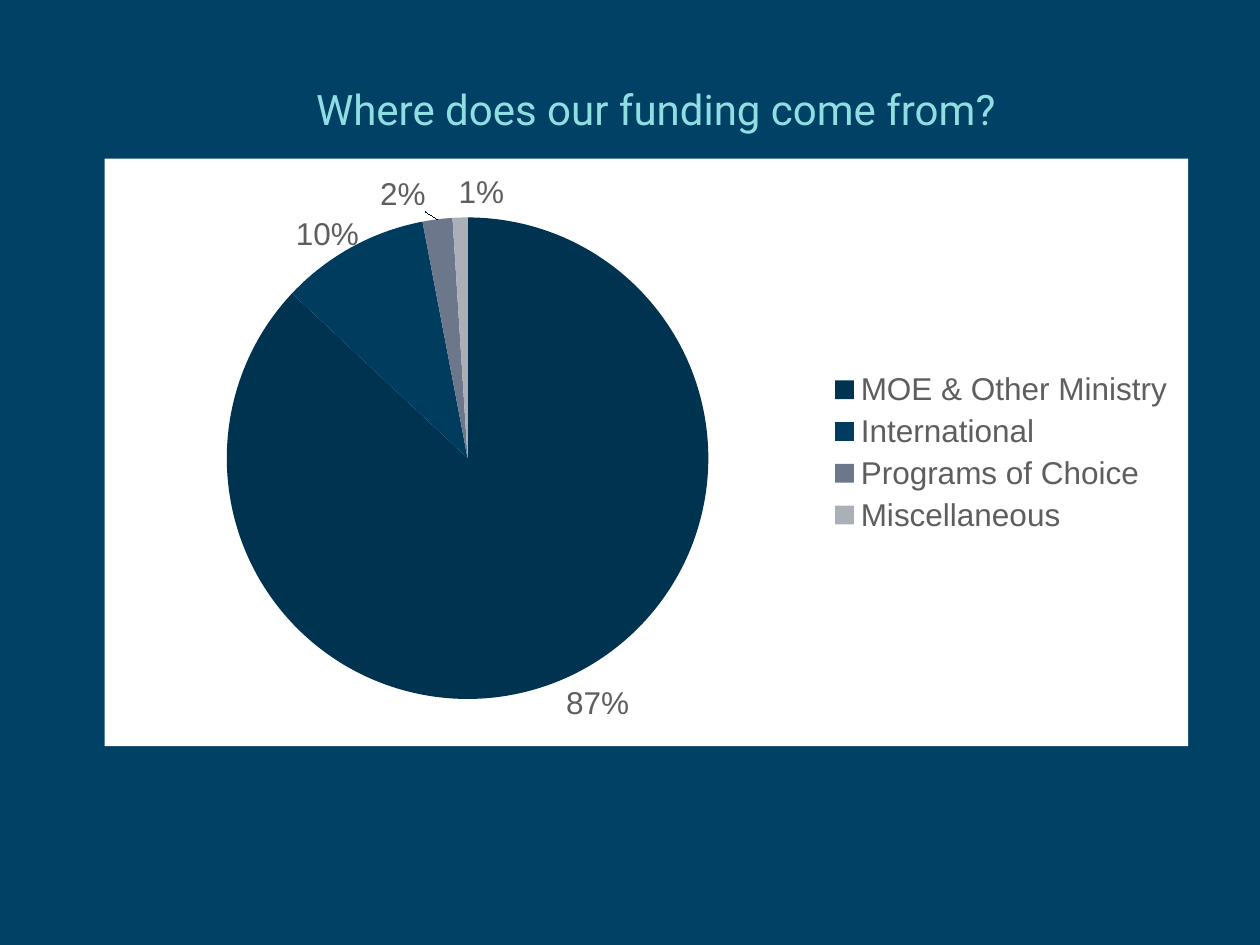
from lxml import etree
from pptx import Presentation
from pptx.chart.data import CategoryChartData
from pptx.dml.color import RGBColor
from pptx.enum.chart import XL_CHART_TYPE, XL_LABEL_POSITION, XL_LEGEND_POSITION
from pptx.enum.text import MSO_ANCHOR, PP_ALIGN
from pptx.oxml import parse_xml
from pptx.oxml.ns import nsdecls, qn
from pptx.util import Cm, Pt

PIE = XL_CHART_TYPE.PIE
OUTSIDE = XL_LABEL_POSITION.OUTSIDE_END
RIGHT = XL_LEGEND_POSITION.RIGHT
MIDDLE = MSO_ANCHOR.MIDDLE
CENTER = PP_ALIGN.CENTER
TITLE_ONLY = 5

BACKGROUND = "004165"
TITLE_COLOR = "8FDFE2"
LABEL_COLOR = "5E5E5E"
PANEL = "FFFFFF"

# Source, share, slice colour, label shift as fractions of the chart
FUNDING = [
    ("MOE & Other Ministry", 0.87, "003350", (0, 0)),
    ("International", 0.10, "003C5E", (0.01, 0.02)),
    ("Programs of Choice", 0.02, "6C778B", (-0.01, 0)),
    ("Miscellaneous", 0.01, "ABB0B8", (0.02, 0)),
]


def color(hex_code):
    return RGBColor.from_string(hex_code)


def add_element(parent, tag, value):
    etree.SubElement(parent, qn(tag)).set("val", str(value))


def manual_layout(modes, **values):
    """Return a chart layout with the given modes and fractions."""
    layout = parse_xml(f"<c:layout {nsdecls('c')}><c:manualLayout/></c:layout>")
    for tag, value in {**modes, **values}.items():
        add_element(layout[0], f"c:{tag}", value)
    return layout


def place_title(slide, text, box):
    title = slide.shapes.title
    title.left, title.top, title.width, title.height = box
    frame = title.text_frame
    frame.word_wrap = False
    frame.vertical_anchor = MIDDLE
    para = frame.paragraphs[0]
    para.alignment = CENTER
    span = para.add_run()
    span.text = text
    span.font.name = "Roboto"
    span.font.size = Pt(24)
    span.font.color.rgb = color(TITLE_COLOR)


def fill_chart_area(chart, hex_code):
    area = parse_xml(
        f"<c:spPr {nsdecls('c', 'a')}><a:solidFill><a:srgbClr val=\"{hex_code}\"/>"
        "</a:solidFill><a:ln><a:noFill/></a:ln></c:spPr>"
    )
    chart.element.find(qn("c:chart")).addnext(area)


def place_pie(chart):
    """Fix the pie inside the chart, leaving the right side to the legend."""
    plot_area = chart.element.find(".//" + qn("c:plotArea"))
    for old in plot_area.findall(qn("c:layout")):
        plot_area.remove(old)
    modes = {"layoutTarget": "inner", "xMode": "edge", "yMode": "edge"}
    plot_area.insert(0, manual_layout(modes, x=0.11, y=0.1, w=0.45, h=0.82))


def style_slices(plot):
    for index, (_, _, slice_color, (x, y)) in enumerate(FUNDING):
        point = plot.series[0].points[index]
        point.format.fill.solid()
        point.format.fill.fore_color.rgb = color(slice_color)
        point.data_label.position = OUTSIDE
        # Shift the label from its default place
        label = plot.series[0]._element.findall(".//" + qn("c:dLbl"))[index]
        number = parse_xml(
            f"<c:numFmt {nsdecls('c')} formatCode=\"0%\" sourceLinked=\"0\"/>"
        )
        label[0].addnext(number)
        if x or y:
            label[0].addnext(manual_layout({}, x=x, y=y))


def add_funding_chart(slide, box):
    data = CategoryChartData(number_format="0%")
    data.categories = [row[0] for row in FUNDING]
    data.add_series("Series 1", [row[1] for row in FUNDING])
    chart = slide.shapes.add_chart(PIE, *box, data).chart
    chart.has_title = False
    chart.font.name = "Arial"
    chart.font.size = Pt(18)
    chart.font.color.rgb = color(LABEL_COLOR)
    fill_chart_area(chart, PANEL)
    place_pie(chart)

    # Legend
    chart.has_legend = True
    chart.legend.position = RIGHT
    chart.legend.include_in_layout = False

    # Slices and their labels
    plot = chart.plots[0]
    plot.vary_by_categories = True
    style_slices(plot)


def main():
    deck = Presentation()
    deck.slide_width, deck.slide_height = Cm(25.4), Cm(19.05)
    slide = deck.slides.add_slide(deck.slide_layouts[TITLE_ONLY])
    slide.background.fill.solid()
    slide.background.fill.fore_color.rgb = color(BACKGROUND)

    place_title(slide, "Where does our funding come from?",
                (Cm(6.02), Cm(1.55), Cm(14.4), Cm(1.27)))
    add_funding_chart(slide, (Cm(2.11), Cm(3.2), Cm(21.84), Cm(11.84)))
    deck.save("out.pptx")


if __name__ == "__main__":
    main()
